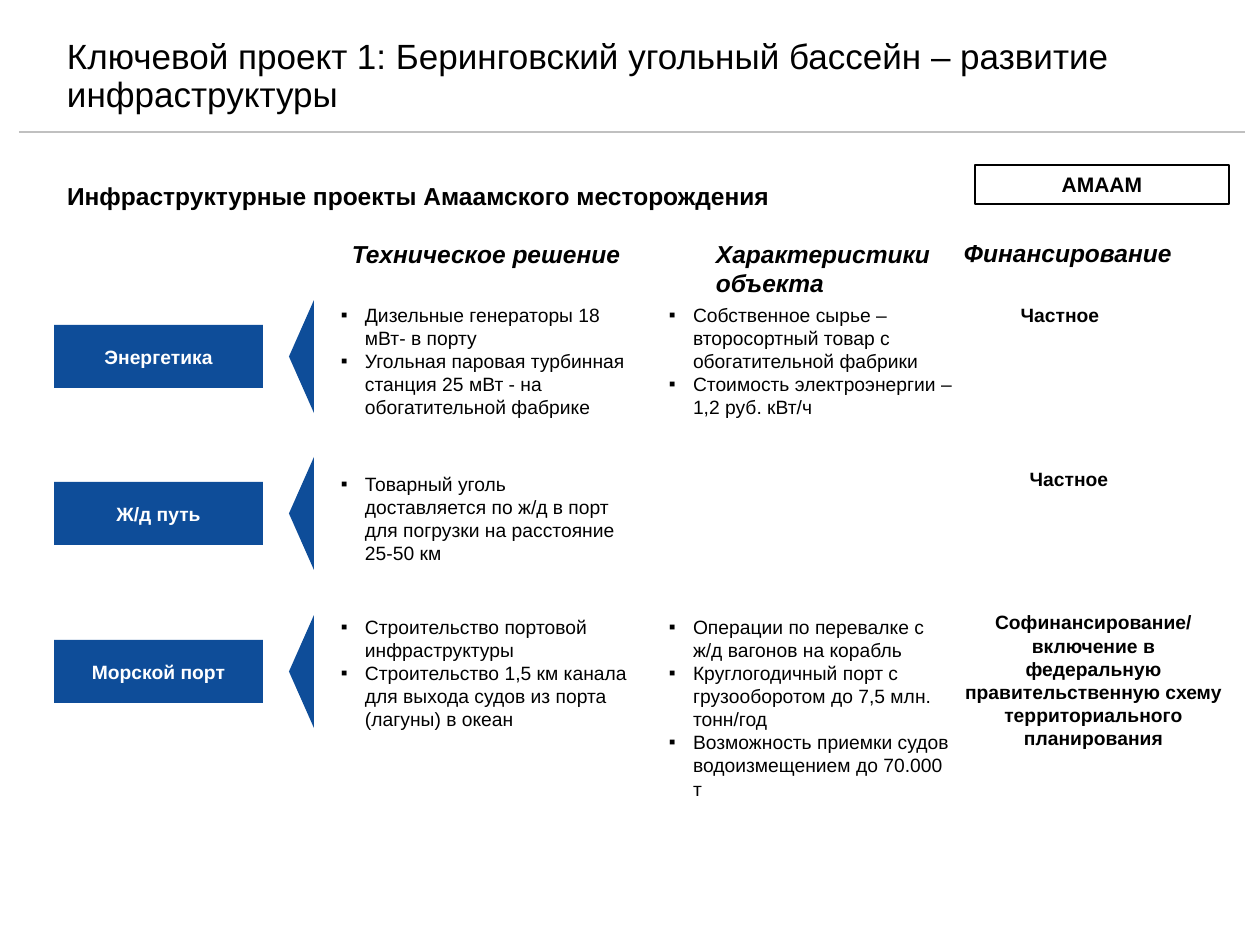
from dataclasses import dataclass

from lxml import etree
from pptx import Presentation
from pptx.dml.color import RGBColor
from pptx.enum.shapes import MSO_CONNECTOR, MSO_SHAPE
from pptx.enum.text import MSO_ANCHOR, PP_ALIGN
from pptx.oxml.ns import qn
from pptx.util import Emu, Pt

TOP, MIDDLE = MSO_ANCHOR.TOP, MSO_ANCHOR.MIDDLE
LEFT, CENTER = PP_ALIGN.LEFT, PP_ALIGN.CENTER
RECTANGLE, TRIANGLE = MSO_SHAPE.RECTANGLE, MSO_SHAPE.ISOSCELES_TRIANGLE
STRAIGHT = MSO_CONNECTOR.STRAIGHT

COLORS = {"black": "000000", "white": "FFFFFF", "blue": "0E4D99", "grey": "C0C0C0"}
EMU_PER_PX = 914400 / 126
INDENT = 24


@dataclass(frozen=True)
class Box:
    left: int
    top: int
    width: int
    height: int


@dataclass(frozen=True)
class TextStyle:
    size: int = 11
    bold: bool = False
    italic: bool = False
    color: str = "black"
    align: PP_ALIGN = LEFT
    anchor: MSO_ANCHOR = TOP
    inset_top: int = 6
    inset_side: int = 13
    line_spacing: float = 1.0
    bullet: str = ""


@dataclass(frozen=True)
class Label:
    box: Box
    lines: tuple[str, ...]
    style: TextStyle


@dataclass(frozen=True)
class Row:
    name: str
    tag_top: int
    text_top: int
    solution: tuple[str, ...]
    features: tuple[str, ...]
    funding: Label


TITLE = TextStyle(size=20, anchor=MIDDLE, line_spacing=0.9)
SUBTITLE = TextStyle(size=14, bold=True)
HEADING = TextStyle(size=14, bold=True, italic=True)
BADGE = TextStyle(size=12, bold=True, align=CENTER, anchor=MIDDLE, inset_side=2)
TAG = TextStyle(bold=True, color="white", align=CENTER, anchor=MIDDLE)
FUNDING = TextStyle(bold=True, align=CENTER, anchor=MIDDLE)
BULLETS = TextStyle(inset_top=13, bullet="▪")

LABELS = [
    Label(Box(54, 35, 1158, 85),
          ("Ключевой проект 1: Беринговский угольный бассейн – развитие инфраструктуры",), TITLE),
    Label(Box(54, 175, 1052, 59), ("Инфраструктурные проекты Амаамского месторождения",), SUBTITLE),
    Label(Box(339, 233, 302, 42), ("Техническое решение",), HEADING),
    Label(Box(703, 233, 263, 72), ("Характеристики объекта",), HEADING),
    Label(Box(951, 232, 261, 42), ("Финансирование",), HEADING),
]

ROWS = [
    Row("Энергетика", 325, 290,
        ("Дизельные генераторы 18 мВт- в порту",
         "Угольная паровая турбинная станция 25 мВт - на обогатительной фабрике"),
        ("Собственное сырье – второсортный товар с обогатительной фабрики",
         "Стоимость электроэнергии – 1,2 руб. кВт/ч"),
        Label(Box(960, 290, 200, 49), ("Частное",), FUNDING)),
    Row("Ж/д путь", 482, 459,
        ("Товарный уголь доставляется по ж/д в порт для погрузки на расстояние 25-50 км",),
        (),
        Label(Box(969, 454, 200, 49), ("Частное",), FUNDING)),
    Row("Морской порт", 640, 602,
        ("Строительство портовой инфраструктуры",
         "Строительство 1,5 км канала для выхода судов из порта (лагуны) в океан"),
        ("Операции по перевалке с ж/д вагонов на корабль",
         "Круглогодичный порт с грузооборотом до 7,5 млн. тонн/год",
         "Возможность приемки судов водоизмещением до 70.000 т"),
        Label(Box(949, 638, 289, 84),
              ("Софинансирование/",
               "включение в федеральную правительственную схему территориального планирования"),
              FUNDING)),
]


def px(value: float) -> Emu:
    return Emu(round(value * EMU_PER_PX))


def rgb(name: str) -> RGBColor:
    return RGBColor.from_string(COLORS[name])


def place(box: Box) -> tuple[Emu, ...]:
    return px(box.left), px(box.top), px(box.width), px(box.height)


def apply(target, values: dict) -> None:
    for name, value in values.items():
        setattr(target, name, value)


def add_bullet(paragraph, symbol: str) -> None:
    properties = paragraph._p.get_or_add_pPr()
    properties.set("marL", str(px(INDENT)))
    properties.set("indent", str(-px(INDENT)))
    etree.SubElement(properties, qn("a:buFont")).set("typeface", "Arial")
    etree.SubElement(properties, qn("a:buChar")).set("char", symbol)


def write(shape, lines: tuple[str, ...], style: TextStyle) -> None:
    frame = shape.text_frame
    apply(frame, {
        "word_wrap": True, "vertical_anchor": style.anchor,
        "margin_left": px(style.inset_side), "margin_right": px(style.inset_side),
        "margin_top": px(style.inset_top), "margin_bottom": px(6),
    })
    for index, line in enumerate(lines):
        paragraph = frame.add_paragraph() if index else frame.paragraphs[0]
        if style.bullet:
            add_bullet(paragraph, style.bullet)
        apply(paragraph, {"alignment": style.align, "line_spacing": style.line_spacing})
        run = paragraph.add_run()
        run.text = line
        apply(run.font, {"name": "Arial", "size": Pt(style.size),
                         "bold": style.bold, "italic": style.italic})
        run.font.color.rgb = rgb(style.color)


def add_label(slide, label: Label) -> None:
    write(slide.shapes.add_textbox(*place(label.box)), label.lines, label.style)


def add_block(slide, kind: MSO_SHAPE, box: Box, fill: str = "", line: str = ""):
    shape = slide.shapes.add_shape(kind, *place(box))
    shape.shadow.inherit = False
    if fill:
        shape.fill.solid()
        shape.fill.fore_color.rgb = rgb(fill)
    else:
        shape.fill.background()
    if line:
        shape.line.color.rgb = rgb(line)
        shape.line.width = Pt(0.75)
    else:
        shape.line.fill.background()
    return shape


def add_rule(slide, start: int, end: int, top: int) -> None:
    rule = slide.shapes.add_connector(STRAIGHT, px(start), px(top), px(end), px(top))
    rule.line.color.rgb = rgb("grey")
    rule.line.width = Pt(0.75)
    etree.SubElement(rule._element.spPr, qn("a:effectLst"))


def add_row(slide, row: Row) -> None:
    tag = add_block(slide, RECTANGLE, Box(54, row.tag_top, 209, 63), fill="blue")
    write(tag, (row.name,), TAG)
    pointer = add_block(slide, TRIANGLE, Box(245, row.tag_top + 19, 113, 25), fill="blue")
    pointer.rotation = 270
    add_label(slide, Label(Box(328, row.text_top, 314, 137), row.solution, BULLETS))
    if row.features:
        add_label(slide, Label(Box(656, row.text_top, 310, 137), row.features, BULLETS))
    add_label(slide, row.funding)


def main() -> None:
    presentation = Presentation()
    apply(presentation, {"slide_width": px(1260), "slide_height": px(945)})
    slide = presentation.slides.add_slide(presentation.slide_layouts[6])
    add_rule(slide, 19, 1245, 132)
    for label in LABELS:
        add_label(slide, label)
    badge = add_block(slide, RECTANGLE, Box(975, 165, 254, 39), line="black")
    write(badge, ("АМААМ",), BADGE)
    for row in ROWS:
        add_row(slide, row)
    presentation.save("out.pptx")


if __name__ == "__main__":
    main()
